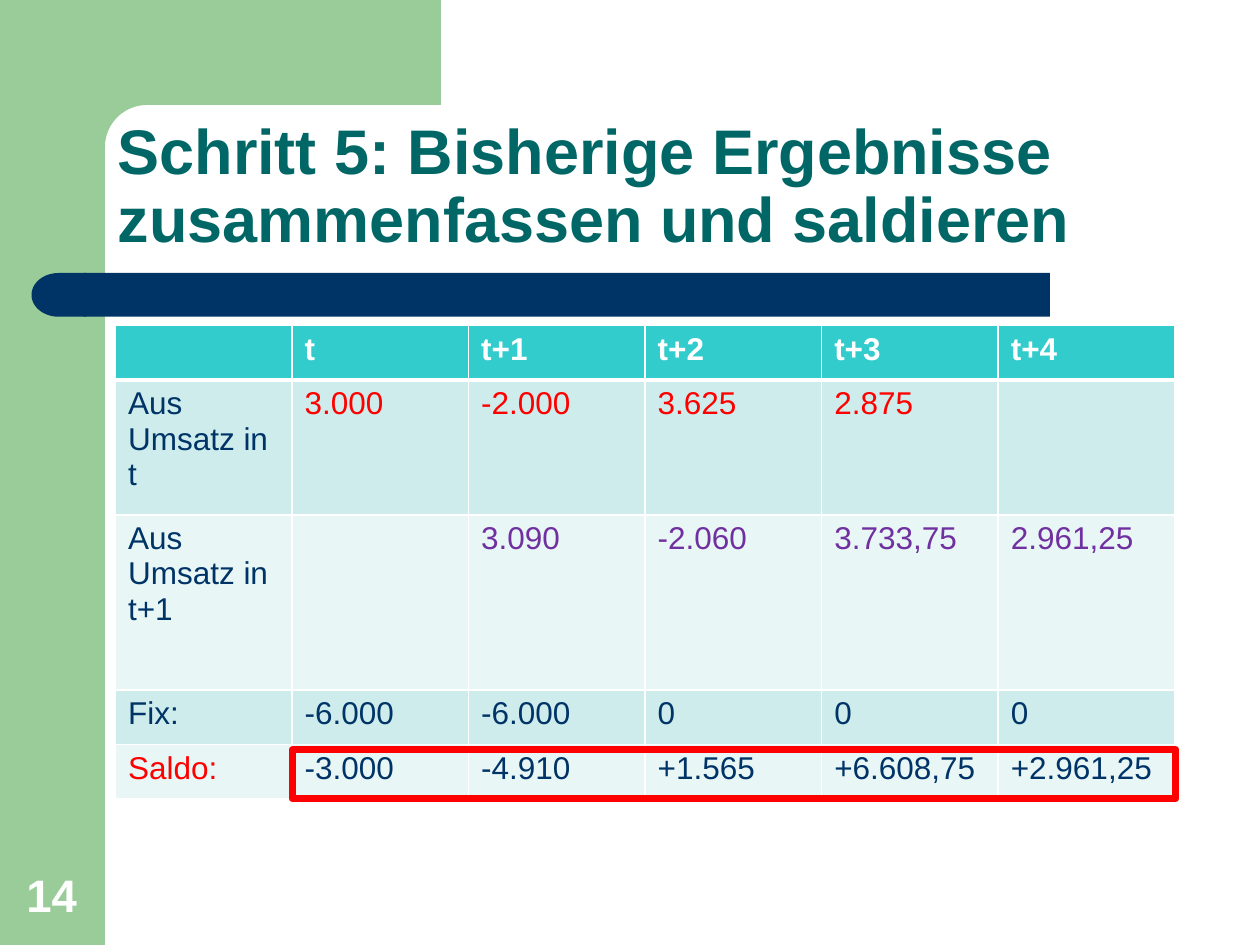
from dataclasses import dataclass
from math import cos, pi, sin

from lxml.etree import SubElement
from pptx import Presentation
from pptx.dml.color import RGBColor
from pptx.enum.shapes import MSO_SHAPE
from pptx.enum.text import MSO_ANCHOR, MSO_AUTO_SIZE, PP_ALIGN
from pptx.oxml.ns import qn
from pptx.slide import Slide
from pptx.util import Pt

GREEN, NAVY, TEAL, TURQUOISE = "99CC99", "003366", "006666", "33CCCC"
RED, PURPLE, WHITE = "FF0000", "7030A0", "FFFFFF"
BANDS = ("CEECEC", "E8F6F6")

HEADER = ["", "t", "t+1", "t+2", "t+3", "t+4"]
ROWS = [
    (["Aus Umsatz in t", "3.000", "-2.000", "3.625", "2.875", ""], NAVY, RED),
    (["Aus Umsatz in t+1", "", "3.090", "-2.060", "3.733,75", "2.961,25"], NAVY, PURPLE),
    (["Fix:", "-6.000", "-6.000", "0", "0", "0"], NAVY, NAVY),
    (["Saldo:", "-3.000", "-4.910", "+1.565", "+6.608,75", "+2.961,25"], RED, NAVY),
]
ROW_HEIGHTS = [31.2, 77, 100, 31.2, 31.2]
COLUMN_WIDTH = 100.9


def rgb(value):
    return RGBColor.from_string(value)


@dataclass
class Page:
    """Holds the text style and the slide on which elements are placed."""

    slide: Slide
    font: str = "Arial"

    def format(self, para, size, color, bold=False):
        para.font.name = self.font
        para.font.size = Pt(size)
        para.font.bold = bold
        para.font.color.rgb = rgb(color)

    def place(self, box, bounds):
        box.left, box.top, box.width, box.height = map(Pt, bounds)

    def title(self, text, bounds):
        box = self.slide.shapes.title
        self.place(box, bounds)
        frame = box.text_frame
        frame.text = text
        frame.word_wrap = True
        frame.auto_size = MSO_AUTO_SIZE.NONE
        frame.vertical_anchor = MSO_ANCHOR.BOTTOM
        para = frame.paragraphs[0]
        para.alignment = PP_ALIGN.LEFT
        para.line_spacing = 0.9
        self.format(para, 36, TEAL, True)

    def text(self, text, bounds, size, color):
        frame = self.slide.shapes.add_textbox(*map(Pt, bounds)).text_frame
        frame.text = text
        frame.word_wrap = True
        frame.vertical_anchor = MSO_ANCHOR.BOTTOM
        para = frame.paragraphs[0]
        para.alignment = PP_ALIGN.CENTER
        self.format(para, size, color, True)

    def paint(self, shape, color):
        shape.shadow.inherit = False
        shape.fill.solid()
        shape.fill.fore_color.rgb = rgb(color)
        shape.line.fill.background()

    def shape(self, kind, bounds, color):
        shape = self.slide.shapes.add_shape(kind, *map(Pt, bounds))
        self.paint(shape, color)
        return shape

    def outline(self, points, color):
        start, *others = [(Pt(x), Pt(y)) for x, y in points]
        builder = self.slide.shapes.build_freeform(*start)
        builder.add_line_segments(others)
        self.paint(builder.convert_to_shape(), color)

    def frame(self, bounds, color, width):
        shape = self.shape(MSO_SHAPE.RECTANGLE, bounds, color)
        shape.fill.background()
        shape.line.color.rgb = rgb(color)
        shape.line.width = Pt(width)

    def borders(self, cell, widths):
        properties = cell._tc.get_or_add_tcPr()
        for index, (side, width) in enumerate(zip(("lnL", "lnR", "lnT", "lnB"), widths)):
            line = properties.makeelement(qn(f"a:{side}"), {"w": str(Pt(width))})
            fill = SubElement(line, qn("a:solidFill"))
            SubElement(fill, qn("a:srgbClr"), val=WHITE)
            properties.insert(index, line)

    def cell(self, cell, text, color, fill, bold, widths):
        cell.text = text
        self.format(cell.text_frame.paragraphs[0], 18, color, bold)
        cell.fill.solid()
        cell.fill.fore_color.rgb = rgb(fill)
        self.borders(cell, widths)

    def table(self, left, top):
        bounds = (left, top, COLUMN_WIDTH * len(HEADER), sum(ROW_HEIGHTS))
        size = (len(ROW_HEIGHTS), len(HEADER))
        table = self.slide.shapes.add_table(*size, *map(Pt, bounds)).table
        for column in table.columns:
            column.width = Pt(COLUMN_WIDTH)
        for row, height in zip(table.rows, ROW_HEIGHTS):
            row.height = Pt(height)
        for column, text in enumerate(HEADER):
            self.cell(table.cell(0, column), text, WHITE, TURQUOISE, True, (1, 1, 1, 3))
        for number, (texts, label_color, value_color) in enumerate(ROWS, 1):
            fill = BANDS[(number - 1) % 2]
            widths = (1, 1, 3 if number == 1 else 1, 1)
            for column, text in enumerate(texts):
                color = value_color if column else label_color
                self.cell(table.cell(number, column), text, color, fill, False, widths)


def rounded_corner(x, y, radius, steps=12):
    angles = [pi / 2 * step / steps for step in range(steps + 1)]
    return [(x - radius * sin(a), y - radius * cos(a)) for a in angles]


def main():
    deck = Presentation()
    deck.slide_width, deck.slide_height = Pt(720), Pt(540)
    page = Page(deck.slides.add_slide(deck.slide_layouts[5]))

    page.shape(MSO_SHAPE.RECTANGLE, (0, 0, 60, 540), GREEN)
    corner = rounded_corner(84, 84, 24)
    page.outline([(36, 0), (252, 0), (252, 60), *corner, (60, 92), (36, 92)], GREEN)
    page.shape(MSO_SHAPE.RECTANGLE, (48, 156, 552, 25), NAVY)
    cap = page.shape(MSO_SHAPE.FLOWCHART_DELAY, (18, 156, 31, 25), NAVY)
    cap.rotation = 180

    page.title("Schritt 5: Bisherige Ergebnisse zusammenfassen und saldieren", (60, 60, 624, 90))
    page.table(66, 186)
    page.text("14", (6.5, 492, 46, 38), 26, WHITE)
    page.frame((167, 428.5, 505, 28), RED, 4)
    deck.save("out.pptx")


if __name__ == "__main__":
    main()
